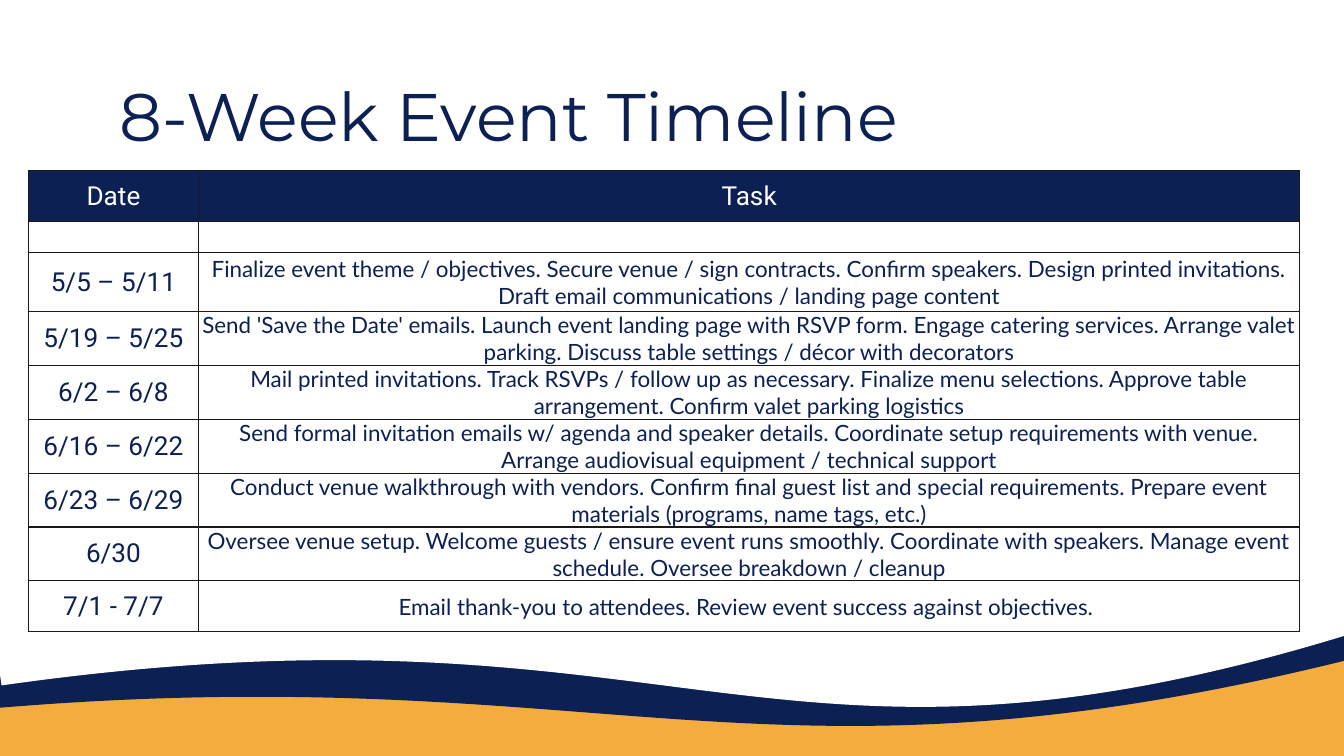
from pptx import Presentation
from pptx.dml.color import RGBColor
from pptx.enum.shapes import MSO_SHAPE as SHAPE
from pptx.enum.text import MSO_ANCHOR as ANCHOR, MSO_AUTO_SIZE as AUTO, PP_ALIGN as ALIGN
from pptx.oxml import parse_xml
from pptx.oxml.ns import nsdecls, qn
from pptx.util import Inches, Pt

COLORS = {"navy": "0C2054", "gold": "F3AC3D", "white": "FFFFFF", "border": "191919"}
WIDTH = 10
HEIGHT = WIDTH * 9 / 16
TIMELINE = [
    ("Date", "Task"),
    ("", ""),
    ("5/5 – 5/11", "Finalize event theme / objectives. Secure venue / sign contracts. "
     "Confirm speakers. Design printed invitations. "
     "Draft email communications / landing page content"),
    ("5/19 – 5/25", "Send 'Save the Date' emails. Launch event landing page with RSVP form. "
     "Engage catering services. Arrange valet parking. "
     "Discuss table settings / décor with decorators"),
    ("6/2 – 6/8", "Mail printed invitations. Track RSVPs / follow up as necessary. "
     "Finalize menu selections. Approve table arrangement. Confirm valet parking logistics"),
    ("6/16 – 6/22", "Send formal invitation emails w/ agenda and speaker details. "
     "Coordinate setup requirements with venue. "
     "Arrange audiovisual equipment / technical support"),
    ("6/23 – 6/29", "Conduct venue walkthrough with vendors. "
     "Confirm final guest list and special requirements. "
     "Prepare event materials (programs, name tags, etc.)"),
    ("6/30", "Oversee venue setup. Welcome guests / ensure event runs smoothly. "
     "Coordinate with speakers. Manage event schedule. Oversee breakdown / cleanup"),
    ("7/1 - 7/7", "Email thank-you to attendees. Review event success against objectives. "),
]
COLUMN_SHARES = (1.27, 8.19)
ROW_SHARES = (0.38, 0.23, 0.44, 0.4, 0.4, 0.4, 0.4, 0.4, 0.38)


def rgb(name):
    return RGBColor.from_string(COLORS[name])


def style_paragraph(p, size, font, color, align):
    p.alignment = align
    p.font.size = Pt(size)
    p.font.name = font
    p.font.color.rgb = rgb(color)


def add_wave(slide, box, color):
    """Tilted, mirrored wave that covers the slide above its lower edge."""
    sp = slide.shapes.add_shape(SHAPE.FLOWCHART_DOCUMENT, *map(Inches, box))
    sp.shadow.inherit = False
    sp.fill.solid()
    sp.fill.fore_color.rgb = rgb(color)
    sp.line.fill.background()
    sp.rotation = 351.9
    sp.element.spPr.find(qn("a:xfrm")).set("flipH", "1")


def place_title(slide, box, text):
    title = slide.shapes.title
    title.left, title.top, title.width, title.height = map(Inches, box)
    tf = title.text_frame
    tf.text = text
    tf.word_wrap = True
    tf.auto_size = AUTO.NONE
    tf.vertical_anchor = ANCHOR.MIDDLE
    tf.margin_left = tf.margin_right = tf.margin_top = tf.margin_bottom = Inches(0.1)
    style_paragraph(tf.paragraphs[0], 36, "Montserrat", "navy", ALIGN.LEFT)
    # Bring the title in front of the waves
    slide.shapes.element.append(title.element)


def add_borders(cell):
    tc_pr = cell._tc.get_or_add_tcPr()
    for i, side in enumerate(("lnL", "lnR", "lnT", "lnB")):
        tc_pr.insert(i, parse_xml(
            f'<a:{side} {nsdecls("a")} w="{Pt(0.75)}"><a:solidFill>'
            f'<a:srgbClr val="{COLORS["border"]}"/></a:solidFill></a:{side}>'))


def fill_cell(cell, text, is_header, is_date):
    cell.fill.solid()
    cell.fill.fore_color.rgb = rgb("navy" if is_header else "white")
    cell.vertical_anchor = ANCHOR.MIDDLE
    cell.margin_left = cell.margin_right = Inches(0.1 if is_header or is_date else 0)
    cell.margin_top = cell.margin_bottom = Inches(0.07 if is_header else 0)
    add_borders(cell)
    p = cell.text_frame.paragraphs[0]
    if text:
        p.text = text
        size, font = (14, "Roboto") if is_header or is_date else (12, "Lato")
        style_paragraph(p, size, font, "white" if is_header else "navy", ALIGN.CENTER)
    else:
        # Small end mark keeps the spacer row low
        p._p.get_or_add_endParaRPr().set("sz", "800")


def add_timeline(slide, box, rows):
    width, height = box[2:]
    table = slide.shapes.add_table(len(rows), len(rows[0]), *map(Inches, box)).table
    for column, share in zip(table.columns, COLUMN_SHARES):
        column.width = Inches(width * share / sum(COLUMN_SHARES))
    for row, share in zip(table.rows, ROW_SHARES):
        row.height = Inches(height * share / sum(ROW_SHARES))
    for r, texts in enumerate(rows):
        for c, text in enumerate(texts):
            fill_cell(table.cell(r, c), text, is_header=r == 0, is_date=c == 0)


def main():
    prs = Presentation()
    prs.slide_width, prs.slide_height = Inches(WIDTH), Inches(HEIGHT)
    slide = prs.slides.add_slide(prs.slide_layouts[5])

    # Gold ground under a navy and a white wave
    slide.background.fill.solid()
    slide.background.fill.fore_color.rgb = rgb("gold")
    add_wave(slide, (-2.08, -0.7, 13.55, 6.52), "navy")
    add_wave(slide, (-0.32, -0.88, 10.94, 6.52), "white")

    # Title and timeline
    place_title(slide, (0.79, 0.59, 8.43, 0.53), "8-Week Event Timeline")
    add_timeline(slide, (0.21, 1.27, 9.46, 3.43), TIMELINE)
    prs.save("out.pptx")


if __name__ == "__main__":
    main()
